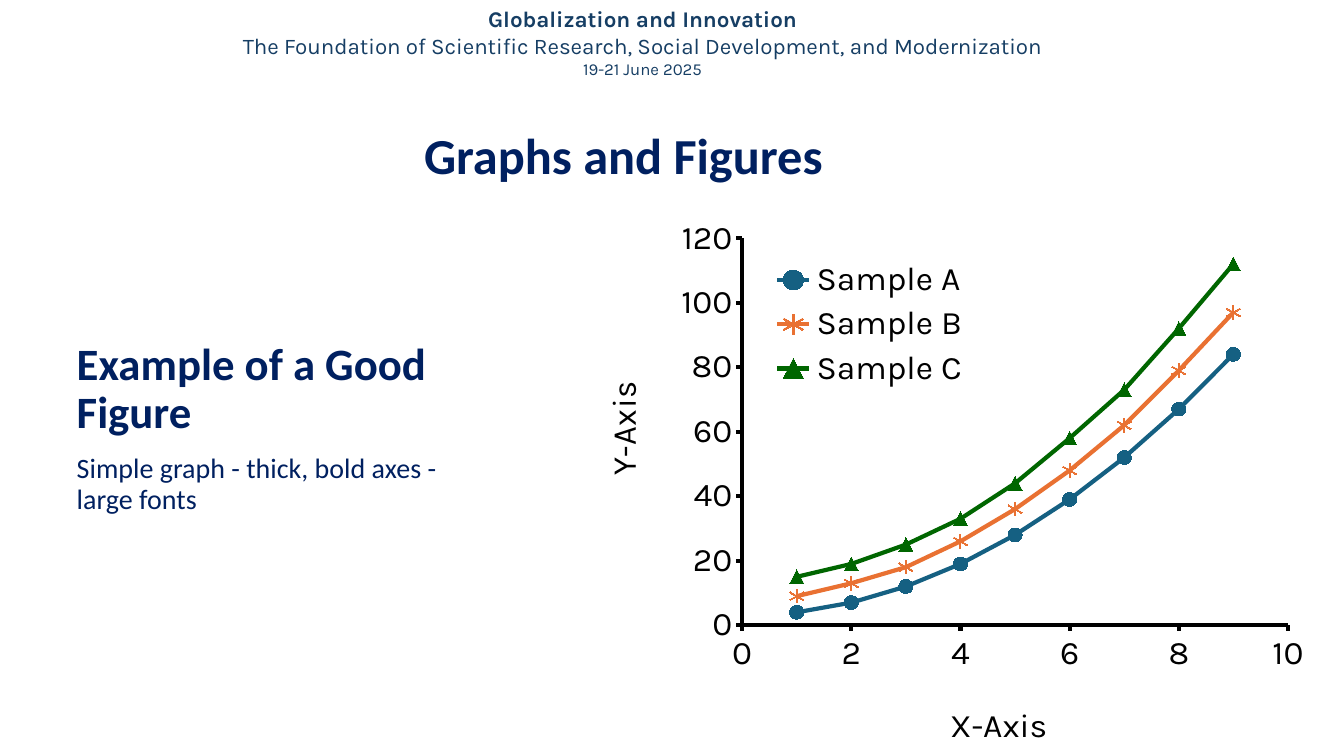
from lxml import etree
from pptx import Presentation
from pptx.chart.data import XyChartData
from pptx.dml.color import RGBColor
from pptx.enum.chart import XL_CHART_TYPE as CT, XL_LEGEND_POSITION as LP
from pptx.enum.chart import XL_MARKER_STYLE as MS, XL_TICK_MARK as TM
from pptx.enum.text import MSO_ANCHOR as ANCHOR, MSO_AUTO_SIZE as FIT, PP_ALIGN as AL
from pptx.oxml import parse_xml
from pptx.oxml.ns import nsdecls, qn
from pptx.util import Cm, Pt

NAVY = RGBColor(0x00, 0x20, 0x60)
STEEL = RGBColor(0x16, 0x3E, 0x64)
BLACK = RGBColor(0x00, 0x00, 0x00)
TEAL = RGBColor(0x15, 0x60, 0x82)
ORANGE = RGBColor(0xE9, 0x71, 0x32)
GREEN = RGBColor(0x00, 0x66, 0x00)

SAMPLES = [
    ("Sample A", TEAL, MS.CIRCLE, [4, 7, 12, 19, 28, 39, 52, 67, 84]),
    ("Sample B", ORANGE, MS.STAR, [9, 13, 18, 26, 36, 48, 62, 79, 97]),
    ("Sample C", GREEN, MS.TRIANGLE, [15, 19, 25, 33, 44, 58, 73, 92, 112]),
]
AXIS_FONT = dict(name="Karla", size=Pt(24), bold=False)


def set_font(font, color, **fmt):
    for key, value in fmt.items():
        setattr(font, key, value)
    font.color.rgb = color


def place(sp, box):
    sp.left, sp.top, sp.width, sp.height = (Cm(v) for v in box)


def add_header(slide, box):
    tf = slide.shapes.add_textbox(*(Cm(v) for v in box)).text_frame
    tf.word_wrap = True
    lines = [
        ("Globalization and Innovation", 16, True),
        ("The Foundation of Scientific Research, Social Development, "
         "and Modernization", 16, False),
        ("19-21 June 2025", 12, False),
    ]
    for i, (text, size, bold) in enumerate(lines):
        p = tf.add_paragraph() if i else tf.paragraphs[0]
        p.alignment = AL.CENTER
        r = p.add_run()
        r.text = text
        set_font(r.font, STEEL, name="Karla", size=Pt(size), bold=bold)


def fill_placeholder(sp, box, text, size, bold, anchor, align=AL.LEFT):
    place(sp, box)
    tf = sp.text_frame
    tf.word_wrap, tf.auto_size, tf.vertical_anchor = True, FIT.NONE, anchor
    p = tf.paragraphs[0]
    p.alignment, p.line_spacing, p.space_before = align, 0.9, Pt(0)
    r = p.add_run()
    r.text = text
    set_font(r.font, NAVY, name="Calibri", size=Pt(size), bold=bold)


def add_caption(heading, body, box):
    """Stack the heading over the body text inside the box."""
    left, top, width, height = box
    split = 3.76
    fill_placeholder(heading, (left, top, width, split - 0.08),
                     "Example of a Good Figure", 32, True, ANCHOR.BOTTOM)
    fill_placeholder(body, (left, top + split + 0.08, width, height - split - 0.08),
                     "Simple graph - thick, bold axes - large fonts",
                     20, False, ANCHOR.TOP)


def set_layout(el, index, x, y, w=None, h=None, inner=False):
    """Give a chart part a manual position in fractions of the chart."""
    for old in el.findall(qn("c:layout")):
        el.remove(old)
    layout = etree.Element(qn("c:layout"))
    manual = etree.SubElement(layout, qn("c:manualLayout"))
    values = [("xMode", "edge"), ("yMode", "edge"),
              ("x", x), ("y", y), ("w", w), ("h", h)]
    if inner:
        values.insert(0, ("layoutTarget", "inner"))
    for tag, value in values:
        if value is not None:
            etree.SubElement(manual, qn("c:" + tag)).set("val", str(value))
    el.insert(index, layout)


def format_axis(axis, title, top, step, title_pos, rotation):
    axis.minimum_scale, axis.maximum_scale, axis.major_unit = 0, top, step
    axis.has_major_gridlines = False
    axis.major_tick_mark, axis.minor_tick_mark = TM.OUTSIDE, TM.NONE
    axis.format.line.color.rgb = BLACK
    axis.format.line.width = Pt(3)
    set_font(axis.tick_labels.font, BLACK, **AXIS_FONT)
    tf = axis.axis_title.text_frame
    r = tf.paragraphs[0].add_run()
    r.text = title
    set_font(r.font, BLACK, **AXIS_FONT)
    tf._txBody.bodyPr.set("rot", str(rotation))
    set_layout(axis.axis_title._element, 1, *title_pos)


def format_series(series, color, style):
    series.smooth = True
    line, marker = series.format.line, series.marker
    line.color.rgb, line.width = color, Pt(3)
    marker.style, marker.size = style, 10
    marker.format.fill.solid()
    marker.format.fill.fore_color.rgb = color
    marker.format.line.color.rgb = color


def add_samples_chart(slide, box):
    data = XyChartData()
    for name, _, _, values in SAMPLES:
        points = data.add_series(name)
        for x, y in enumerate(values, 1):
            points.add_data_point(x, y)
    chart = slide.shapes.add_chart(
        CT.XY_SCATTER_SMOOTH, *(Cm(v) for v in box), data).chart
    chart.has_title = False
    set_font(chart.font, BLACK, name="Karla", size=Pt(10))
    chart._chartSpace.find(qn("c:txPr")).addprevious(parse_xml(
        f'<c:spPr {nsdecls("c", "a")}><a:solidFill><a:srgbClr val="FFFFFF">'
        '<a:alpha val="83000"/></a:srgbClr></a:solidFill>'
        '<a:ln><a:noFill/></a:ln></c:spPr>'))
    for series, (_, color, style, _) in zip(chart.plots[0].series, SAMPLES):
        format_series(series, color, style)
    format_axis(chart.category_axis, "X-Axis", 10, 2, (0.49, 0.92), 0)
    format_axis(chart.value_axis, "Y-Axis", 120, 20, (0.02, 0.32), -5400000)
    chart.has_legend = True
    legend = chart.legend
    legend.position, legend.include_in_layout = LP.RIGHT, True
    set_font(legend.font, BLACK, **AXIS_FONT)
    set_layout(legend._element, 1, 0.25, 0.09, 0.28, 0.26)
    plot_area = chart._chartSpace.chart.plotArea
    set_layout(plot_area, 0, 0.218, 0.059, 0.736, 0.724, inner=True)


def build_figure_slide(prs):
    slide = prs.slides.add_slide(prs.slide_layouts.get_by_name("Comparison"))
    holders = {sp.placeholder_format.idx: sp for sp in slide.placeholders}
    add_header(slide, (5.08, 0, 22.23, 2.13))
    fill_placeholder(holders[0], (1.91, 3.02, 27.61, 1.93), "Graphs and Figures",
                     36, True, ANCHOR.MIDDLE, AL.CENTER)
    add_samples_chart(slide, (14.63, 5.21, 18.69, 13.84))
    add_caption(holders[1], holders[3], (1.68, 7.49, 9.93, 8.18))
    for sp in list(slide.placeholders):
        if not sp.text_frame.text:
            sp._element.getparent().remove(sp._element)


def main():
    prs = Presentation()
    prs.slide_width, prs.slide_height = Cm(33.87), Cm(19.05)
    build_figure_slide(prs)
    prs.save("out.pptx")


if __name__ == "__main__":
    main()
